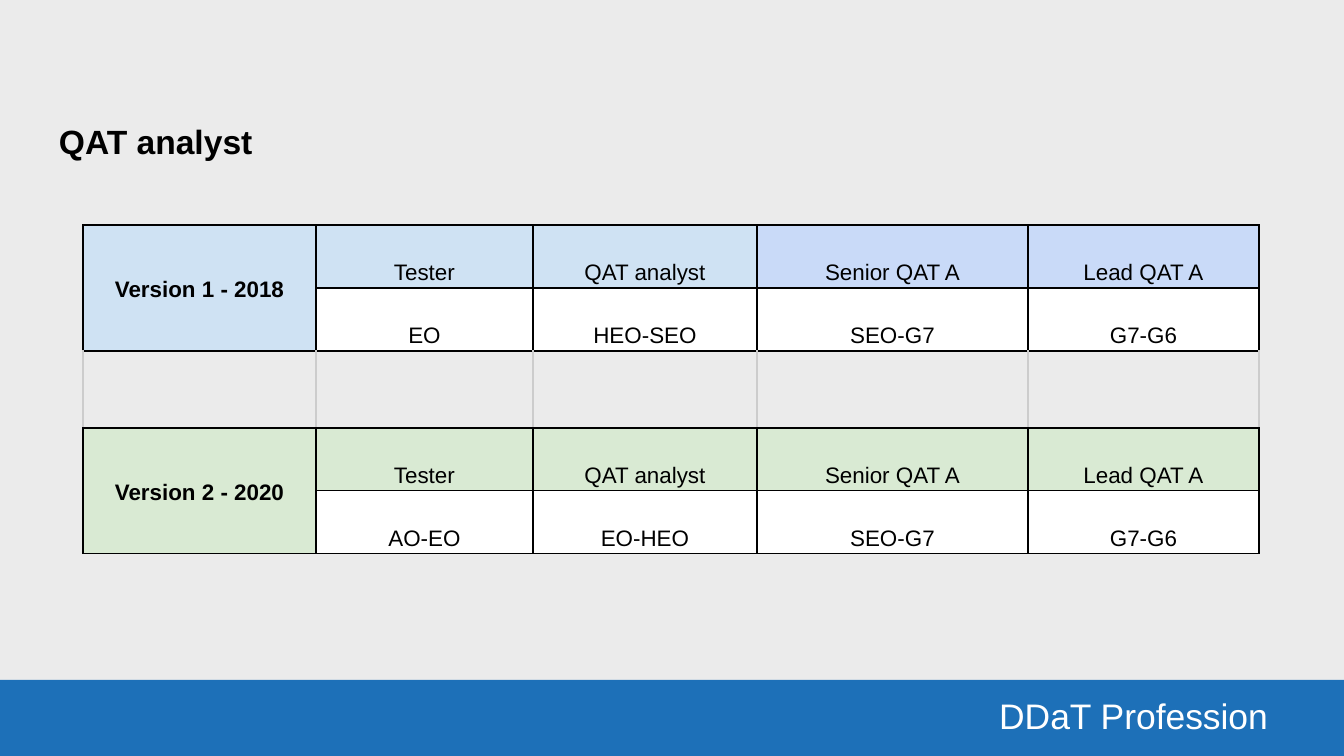
from lxml.etree import SubElement
from pptx import Presentation
from pptx.dml.color import RGBColor
from pptx.enum.shapes import MSO_SHAPE as Shape
from pptx.enum.text import MSO_ANCHOR as Anchor, PP_ALIGN as Align
from pptx.oxml import parse_xml
from pptx.oxml.ns import nsdecls
from pptx.util import Pt

# Content
TITLE = "QAT analyst"
FOOTER = "DDaT Profession"
ROLES = ["Tester", "QAT analyst", "Senior QAT A", "Lead QAT A"]
VERSIONS = [
    {"name": "Version 1 - 2018", "grades": ["EO", "HEO-SEO", "SEO-G7", "G7-G6"],
     "fills": ["blue", "blue", "blue", "periwinkle", "periwinkle"]},
    {"name": "Version 2 - 2020", "grades": ["AO-EO", "EO-HEO", "SEO-G7", "G7-G6"],
     "fills": ["green"] * 5},
]

# Layout in px
SLIDE_SIZE = (1344, 756)
FOOTER_BAR = (0, 680, 1344, 76)
FOOTER_TEXT = (868, 694, 400, 42)
TITLE_BOX = (46, 108, 441, 97)
TABLE_ORIGIN = (83, 225)
COLUMN_WIDTHS = [233, 217, 224, 271, 231]
ROW_HEIGHTS = [63, 63, 77, 63, 63]
GAP_ROW = 2
EMU_PER_PX = 914400 / 134.4

COLORS = {"background": "EBEBEB", "bar": "1D70B8", "black": "000000",
          "white": "FFFFFF", "grid": "CCCCCC", "blue": "CFE2F3",
          "periwinkle": "C9DAF8", "green": "D9EAD3"}


def px(length):
    return round(length * EMU_PER_PX)


def paint(fill, color):
    fill.solid()
    fill.fore_color.rgb = RGBColor.from_string(COLORS[color])


def write(paragraph, text, size, color="black", bold=False, align=Align.LEFT):
    paragraph.alignment = align
    run = paragraph.add_run()
    run.text = text
    run.font.name = "Arial"
    run.font.size = Pt(size)
    run.font.bold = bold
    run.font.color.rgb = RGBColor.from_string(COLORS[color])


def add_text(slide, box, inset, anchor, *args, **kwargs):
    frame = slide.shapes.add_textbox(*map(px, box)).text_frame
    frame.word_wrap = True
    frame.vertical_anchor = anchor
    frame.margin_left = frame.margin_right = px(inset)
    frame.margin_top = frame.margin_bottom = px(inset)
    write(frame.paragraphs[0], *args, **kwargs)


def set_borders(cell, side_color):
    sides = [("lnL", side_color), ("lnR", side_color), ("lnT", "black"), ("lnB", "black")]
    properties = cell._tc.get_or_add_tcPr()
    for position, (tag, color) in enumerate(sides):
        line = parse_xml(f'<a:{tag} {nsdecls("a")} w="{Pt(0.75)}"><a:solidFill>'
                         f'<a:srgbClr val="{COLORS[color]}"/></a:solidFill></a:{tag}>')
        properties.insert(position, line)


def fill_cell(cell, text, color, heading=False):
    paint(cell.fill, color)
    cell.vertical_anchor = Anchor.MIDDLE if heading else Anchor.BOTTOM
    cell.margin_left = cell.margin_right = px(4)
    cell.margin_top = cell.margin_bottom = px(3)
    paragraph = cell.text_frame.paragraphs[0]
    paragraph.line_spacing = 1.15
    write(paragraph, text, 12, bold=heading, align=Align.CENTER)


def add_grades_table(slide):
    size = sum(COLUMN_WIDTHS), sum(ROW_HEIGHTS)
    table = slide.shapes.add_table(len(ROW_HEIGHTS), len(COLUMN_WIDTHS),
                                   *map(px, TABLE_ORIGIN + size)).table
    table.first_row = table.horz_banding = False
    for column, width in zip(table.columns, COLUMN_WIDTHS):
        column.width = px(width)
    for row, height in zip(table.rows, ROW_HEIGHTS):
        row.height = px(height)

    # Each version takes two rows, with the gap row between them
    for index, version in enumerate(VERSIONS):
        top = index * (GAP_ROW + 1)
        table.cell(top, 0).merge(table.cell(top + 1, 0))
        fill_cell(table.cell(top, 0), version["name"], version["fills"][0], heading=True)
        for column, (role, grade) in enumerate(zip(ROLES, version["grades"]), 1):
            fill_cell(table.cell(top, column), role, version["fills"][column])
            fill_cell(table.cell(top + 1, column), grade, "white")

    for row_index, row in enumerate(table.rows):
        for cell in row.cells:
            if row_index == GAP_ROW:
                cell.fill.background()
            set_borders(cell, "grid" if row_index == GAP_ROW else "black")


def main():
    presentation = Presentation()
    presentation.slide_width, presentation.slide_height = map(px, SLIDE_SIZE)
    slide = presentation.slides.add_slide(presentation.slide_layouts[6])
    paint(slide.background.fill, "background")

    # Footer
    bar = slide.shapes.add_shape(Shape.RECTANGLE, *map(px, FOOTER_BAR))
    bar.shadow.inherit = False
    bar.line.fill.background()
    paint(bar.fill, "bar")
    add_text(slide, FOOTER_TEXT, 0, Anchor.MIDDLE, FOOTER, 19, "white", align=Align.RIGHT)

    # Title and table
    add_text(slide, TITLE_BOX, 13, Anchor.TOP, TITLE, 18, bold=True)
    add_grades_table(slide)
    presentation.save("out.pptx")


if __name__ == "__main__":
    main()
